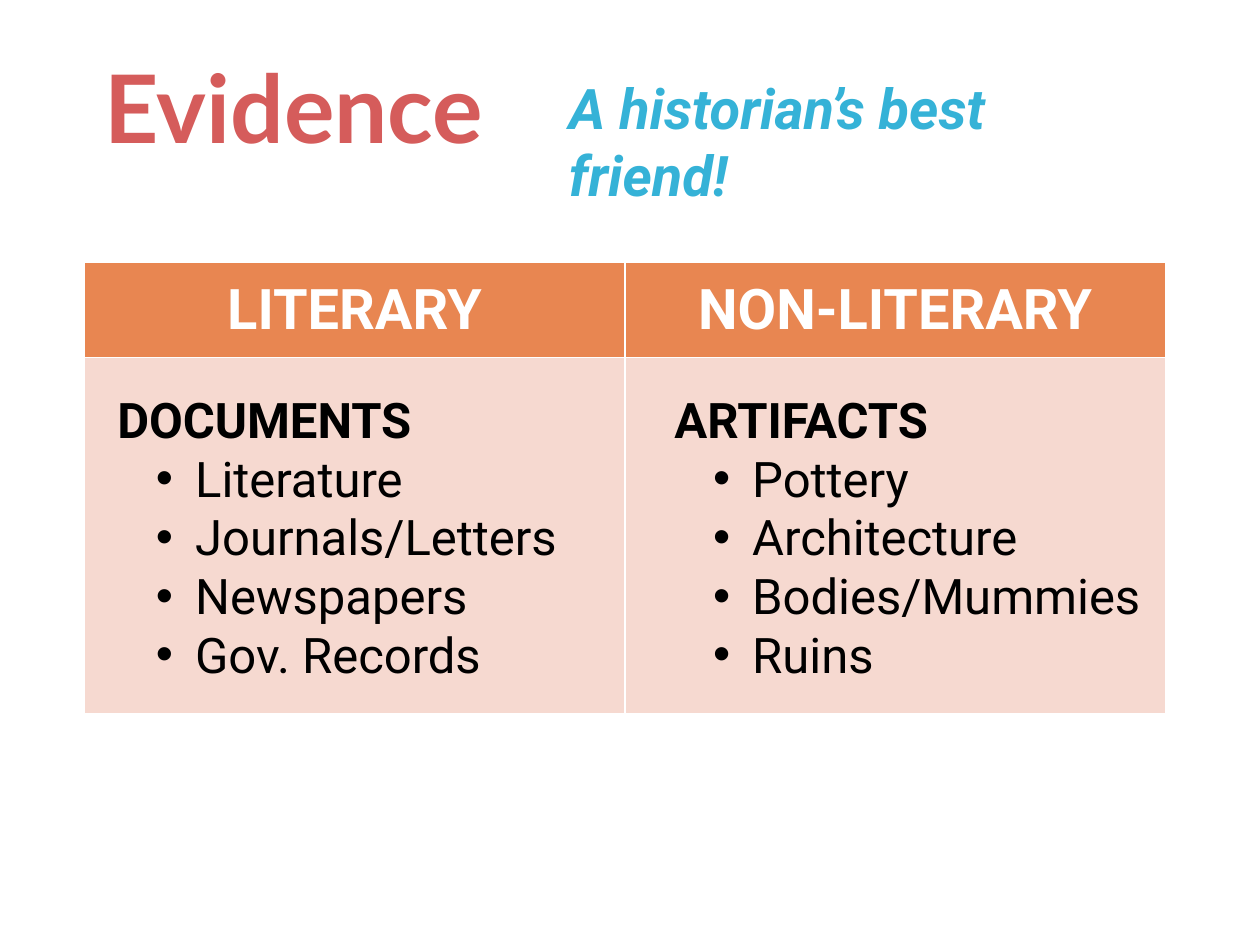
from dataclasses import dataclass

from lxml import etree
from pptx import Presentation
from pptx.dml.color import RGBColor
from pptx.enum.text import MSO_ANCHOR, MSO_AUTO_SIZE, PP_ALIGN
from pptx.oxml.ns import qn
from pptx.util import Cm, Pt

CENTER, LEFT = PP_ALIGN.CENTER, PP_ALIGN.LEFT
MIDDLE, TOP = MSO_ANCHOR.MIDDLE, MSO_ANCHOR.TOP
NO_AUTOFIT = MSO_AUTO_SIZE.NONE
TWO_CONTENT_LAYOUT = 3


@dataclass(frozen=True)
class Theme:
    """Colours, fonts and type sizes of the slide."""
    title_color: str = "D55C5B"
    subtitle_color: str = "35B2D7"
    header_fill: str = "E88651"
    body_fill: str = "F6D9D0"
    header_color: str = "FFFFFF"
    body_color: str = "000000"
    title_font: str = "Lato"
    body_font: str = "Roboto"
    title_size: int = 54
    heading_size: int = 32
    list_size: int = 28


THEME = Theme()
COLUMNS = [
    ("LITERARY", "DOCUMENTS",
     ["Literature", "Journals/Letters", "Newspapers", "Gov. Records"]),
    ("NON-LITERARY", "ARTIFACTS",
     ["Pottery", "Architecture", "Bodies/Mummies", "Ruins"]),
]


def place(shape, left, top, width, height):
    """Put a shape in a box given in centimetres."""
    box = {"left": left, "top": top, "width": width, "height": height}
    for name, value in box.items():
        setattr(shape, name, Cm(value))


def format_paragraph(paragraph, color, size, alignment=LEFT, **font_values):
    """Set the alignment, spacing and font of a paragraph."""
    layout_values = {"alignment": alignment, "space_before": Pt(0)}
    for name, value in layout_values.items():
        setattr(paragraph, name, value)
    values = {"name": THEME.body_font, "size": Pt(size), "bold": True}
    for name, value in (values | font_values).items():
        setattr(paragraph.font, name, value)
    paragraph.font.color.rgb = RGBColor.from_string(color)


def format_frame(text_frame, anchor):
    """Give a text frame wrapping, a fixed size and an anchor."""
    values = {"word_wrap": True, "auto_size": NO_AUTOFIT,
              "vertical_anchor": anchor}
    for name, value in values.items():
        setattr(text_frame, name, value)


def set_bullet(paragraph, character=None):
    """Give a paragraph a hanging bullet, or neither bullet nor indent."""
    properties = paragraph._p.get_or_add_pPr()
    margin, indent = (Cm(1.57), Cm(-0.79)) if character else (0, 0)
    properties.set("marL", str(margin))
    properties.set("indent", str(indent))
    if character:
        font = etree.SubElement(properties, qn("a:buFont"))
        font.set("typeface", "Arial")
        bullet = etree.SubElement(properties, qn("a:buChar"))
        bullet.set("char", character)
    else:
        etree.SubElement(properties, qn("a:buNone"))


def add_heading(slide, left, top):
    """Fill the title and set the subtitle to its right."""
    title = slide.shapes.title
    place(title, left, top, 10.16, 3.39)
    title.text_frame.text = "Evidence"
    format_frame(title.text_frame, MIDDLE)
    format_paragraph(title.text_frame.paragraphs[0], THEME.title_color,
                     THEME.title_size, CENTER, name=THEME.title_font)

    subtitle = slide.shapes.add_textbox(0, 0, 0, 0)
    place(subtitle, left + 10.38, top + 0.92, 12.19, 1.63)
    subtitle.text_frame.text = "A historian’s best friend!"
    format_frame(subtitle.text_frame, TOP)
    format_paragraph(subtitle.text_frame.paragraphs[0], THEME.subtitle_color,
                     THEME.heading_size, italic=True)


def add_evidence_table(slide, left, top, width, header_height, body_height):
    """Add the two-column table behind the lists."""
    frame = slide.shapes.add_table(
        2, len(COLUMNS), Cm(left), Cm(top), Cm(width),
        Cm(header_height + body_height))
    table = frame.table
    table.horz_banding = False
    for row, height in zip(table.rows, (header_height, body_height)):
        row.height = Cm(height)
    for index, (header, _, _) in enumerate(COLUMNS):
        for row, fill in enumerate((THEME.header_fill, THEME.body_fill)):
            cell = table.cell(row, index)
            cell.fill.solid()
            cell.fill.fore_color.rgb = RGBColor.from_string(fill)
        cell = table.cell(0, index)
        cell.text = header
        cell.vertical_anchor = MIDDLE
        format_paragraph(cell.text_frame.paragraphs[0], THEME.header_color,
                         THEME.heading_size, CENTER)
    slide.shapes._spTree.insert(2, frame._element)


def fill_list(placeholder, left, top, heading, items):
    """Fill a body placeholder with a bold heading and bulleted items."""
    place(placeholder, left, top, 10.16, 6.25)
    text_frame = placeholder.text_frame
    text_frame.text = "\n".join([heading, *items])
    format_frame(text_frame, TOP)
    for index, paragraph in enumerate(text_frame.paragraphs):
        set_bullet(paragraph, "•" if index else None)
        format_paragraph(paragraph, THEME.body_color, THEME.list_size,
                         bold=index == 0)


def add_evidence(slide, left, top, width):
    """Add the table and lay one list over each of its columns."""
    add_evidence_table(slide, left, top, width, 1.93, 7.18)
    for index, (_, heading, items) in enumerate(COLUMNS):
        fill_list(slide.placeholders[index + 1], left + 0.41 + index * 11.23,
                  top + 2.44, heading, items)


def main():
    """Build and save the slide."""
    presentation = Presentation()
    presentation.slide_width = Cm(25.4)
    presentation.slide_height = Cm(19.05)
    layout = presentation.slide_layouts[TWO_CONTENT_LAYOUT]
    slide = presentation.slides.add_slide(layout)
    add_heading(slide, 0.84, 0.43)
    add_evidence(slide, 1.7, 5.28, 21.8)
    presentation.save("out.pptx")


if __name__ == "__main__":
    main()
